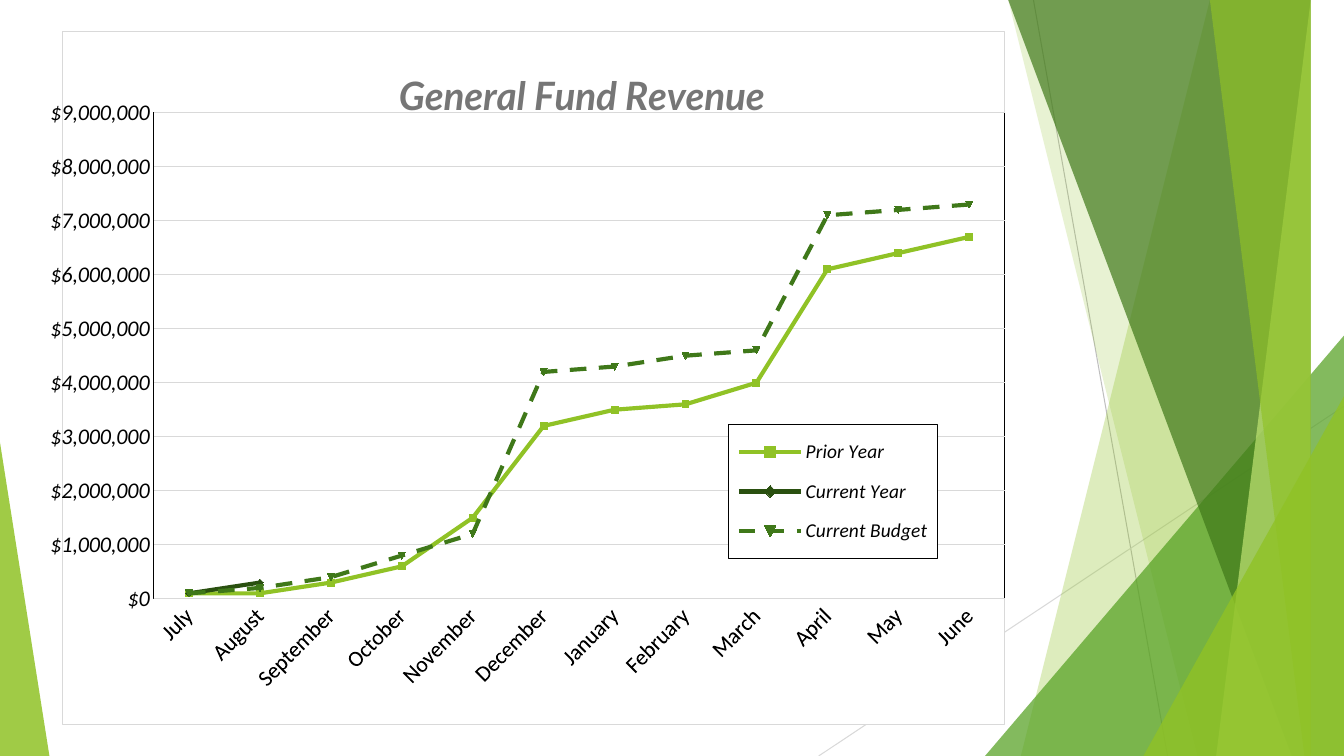
from lxml import etree
from pptx import Presentation
from pptx.chart.data import CategoryChartData
from pptx.dml.color import RGBColor
from pptx.enum.chart import XL_CHART_TYPE, XL_LEGEND_POSITION, XL_MARKER_STYLE, XL_TICK_MARK
from pptx.enum.dml import MSO_LINE
from pptx.enum.shapes import MSO_CONNECTOR, MSO_SHAPE
from pptx.oxml import parse_xml
from pptx.oxml.ns import nsdecls, qn
from pptx.util import Inches, Pt

LIME, GREEN, FOREST, PALE, DARK = "90C226", "54A021", "3F7819", "C0E474", "2A5010"
GRID, BLACK, WHITE = "D9D9D9", "000000", "FFFFFF"
MONTHS = ["July", "August", "September", "October", "November", "December",
          "January", "February", "March", "April", "May", "June"]
PRIOR = [100000, 100000, 300000, 600000, 1500000, 3200000,
         3500000, 3600000, 4000000, 6100000, 6400000, 6700000]
CURRENT = [100000, 300000] + [None] * 10
BUDGET = [100000, 200000, 400000, 800000, 1200000, 4200000,
          4300000, 4500000, 4600000, 7100000, 7200000, 7300000]
REVENUE = [("Prior Year", PRIOR, LIME, MSO_LINE.SOLID),
           ("Current Year", CURRENT, DARK, MSO_LINE.SOLID),
           ("Current Budget", BUDGET, FOREST, MSO_LINE.DASH)]


def rgb(color):
    return RGBColor.from_string(color)


def set_line(line, color, width, dash=None):
    line.color.rgb = rgb(color)
    line.width = Pt(width)
    if dash:
        line.dash_style = dash


def set_font(font, size, color=BLACK, name="Calibri", bold=False, italic=True):
    font.size, font.name, font.bold, font.italic = Pt(size), name, bold, italic
    font.color.rgb = rgb(color)


def style_facet(s, color, opacity):
    s.shadow.inherit = False
    s.line.fill.background()
    s.fill.solid()
    s.fill.fore_color.rgb = rgb(color)
    clr = s.fill._xPr.find(".//" + qn("a:srgbClr"))
    etree.SubElement(clr, qn("a:alpha")).set("val", str(opacity * 1000))


def add_facet(shapes, points, color, opacity):
    builder = shapes.build_freeform(*points[0], scale=Inches(1))
    builder.add_line_segments(points[1:], close=True)
    style_facet(builder.convert_to_shape(), color, opacity)


def add_triangle(shapes, left, top, width, apex, color, opacity):
    s = shapes.add_shape(MSO_SHAPE.ISOSCELES_TRIANGLE, Inches(left), Inches(top),
                         Inches(width), Inches(7.5 - top))
    s.adjustments[0] = apex
    style_facet(s, color, opacity)


def add_line(shapes, x1, y1, x2, y2, color):
    cxn = shapes.add_connector(MSO_CONNECTOR.STRAIGHT, Inches(x1), Inches(y1),
                               Inches(x2), Inches(y2))
    set_line(cxn.line, color, 0.75)
    etree.SubElement(cxn._element.spPr, qn("a:effectLst"))


def add_backdrop(shapes):
    add_line(shapes, 10.25, 0, 11.58, 7.5, "BFBFBF")
    add_line(shapes, 13.33, 4.03, 8.12, 7.5, GRID)
    right = [(13.33, 0), (13.33, 7.5)]
    add_facet(shapes, [(12.28, 0), *right, (10.04, 7.5)], LIME, 30)
    add_facet(shapes, [(10.5, 0), *right, (11.83, 7.5)], LIME, 20)
    add_triangle(shapes, 9.77, 3.33, 3.56, 1, GREEN, 72)
    add_facet(shapes, [(10.21, 0), *right, (12.91, 7.5)], FOREST, 70)
    add_facet(shapes, [(13.03, 0), *right, (11.92, 7.5)], PALE, 70)
    add_facet(shapes, [(11.96, 0), *right, (13.18, 7.5)], LIME, 65)
    add_triangle(shapes, 11.34, 3.93, 1.99, 1, LIME, 80)
    add_triangle(shapes, 0, 4.39, 0.49, 0, LIME, 85)


def frame_xml(color, fill=None):
    inside = f'<a:solidFill><a:srgbClr val="{fill}"/></a:solidFill>' if fill else "<a:noFill/>"
    return parse_xml(f'<c:spPr {nsdecls("c", "a")}>{inside}<a:ln w="9525"><a:solidFill>'
                     f'<a:srgbClr val="{color}"/></a:solidFill></a:ln></c:spPr>')


def place(element, index, x, y, w=None, h=None, inner=False):
    for old in element.findall(qn("c:layout")):
        element.remove(old)
    parts = ['<c:layoutTarget val="inner"/>'] if inner else []
    parts += ['<c:xMode val="edge"/>', '<c:yMode val="edge"/>']
    parts += [f'<c:{tag} val="{value}"/>' for tag, value in zip("xywh", (x, y, w, h))
              if value is not None]
    element.insert(index, parse_xml(f'<c:layout {nsdecls("c")}><c:manualLayout>'
                                    f'{"".join(parts)}</c:manualLayout></c:layout>'))


def format_series(series, color, dash):
    series.smooth = False
    set_line(series.format.line, color, 3, dash)
    marker = series.marker
    marker.style, marker.size = XL_MARKER_STYLE.AUTOMATIC, 5
    marker.format.fill.solid()
    marker.format.fill.fore_color.rgb = rgb(color)
    set_line(marker.format.line, color, 0.75)


def format_axes(chart):
    months, dollars = chart.category_axis, chart.value_axis
    for axis in (months, dollars):
        axis.major_tick_mark = axis.minor_tick_mark = XL_TICK_MARK.NONE
    set_font(months.tick_labels.font, 16, italic=False)
    set_font(dollars.tick_labels.font, 16)
    set_line(months.format.line, GRID, 0.75)
    months._element.txPr.find(qn("a:bodyPr")).set("rot", "-2700000")
    dollars.format.line.fill.background()
    dollars.minimum_scale, dollars.maximum_scale = 0, 9000000
    dollars.major_unit = 1000000
    dollars.tick_labels.number_format = "\\$#,##0"
    dollars.tick_labels.number_format_is_linked = False
    set_line(dollars.major_gridlines.format.line, GRID, 0.75)


def add_title(chart, text):
    chart.has_title = True
    title = chart.chart_title
    r = title.text_frame.paragraphs[0].add_run()
    r.text = text
    set_font(r.font, 28, "767676", "Lato", bold=True)
    place(title._element, 1, 0.35, 0.04)


def add_legend(chart):
    chart.has_legend = True
    legend = chart.legend
    legend.position = XL_LEGEND_POSITION.BOTTOM
    legend.include_in_layout = False
    set_font(legend.font, 14)
    place(legend._element, 1, 0.707, 0.567, 0.222, 0.194)
    legend._element.find(qn("c:overlay")).addnext(frame_xml(BLACK, WHITE))


def add_revenue_chart(shapes):
    data = CategoryChartData(number_format="\\$#,##0")
    data.categories = MONTHS
    for name, values, _, _ in REVENUE:
        data.add_series(name, values)
    chart = shapes.add_chart(XL_CHART_TYPE.LINE_MARKERS, Inches(0.5), Inches(0.31),
                             Inches(9.47), Inches(6.88), data).chart
    set_font(chart.font, 12)
    chart.plots[0].vary_by_categories = False
    for series, (_, _, color, dash) in zip(chart.plots[0].series, REVENUE):
        format_series(series, color, dash)
    format_axes(chart)
    add_title(chart, "General Fund Revenue")
    add_legend(chart)
    body = chart._chartSpace.find(qn("c:chart"))
    body.addnext(frame_xml(GRID, WHITE))
    plot_area = body.find(qn("c:plotArea"))
    place(plot_area, 0, 0.107, 0.117, 0.903, 0.702, inner=True)
    plot_area.append(frame_xml(BLACK))


def main():
    prs = Presentation()
    prs.slide_width, prs.slide_height = Inches(13.33), Inches(7.5)
    s = prs.slides.add_slide(prs.slide_layouts[6])
    add_backdrop(s.shapes)
    add_revenue_chart(s.shapes)
    prs.save("out.pptx")


if __name__ == "__main__":
    main()
